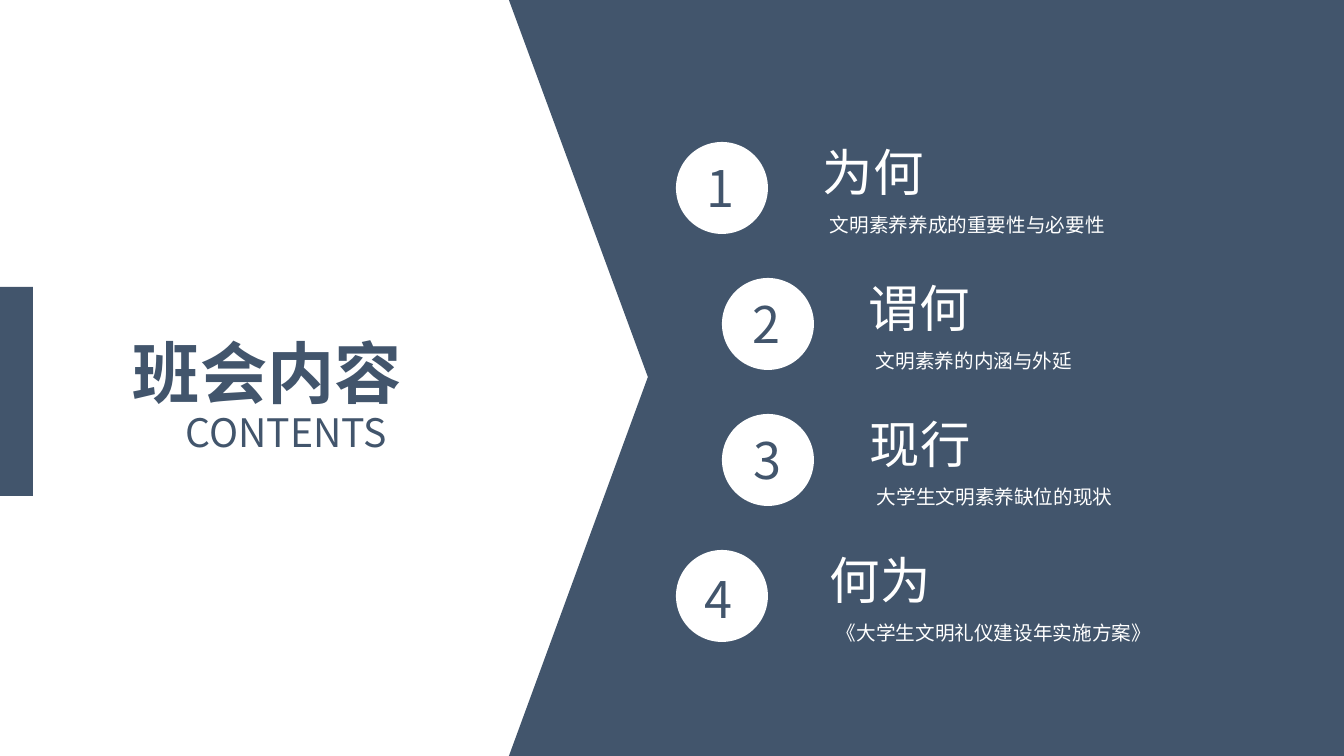
from pptx import Presentation, util as u
from pptx.dml.color import RGBColor
from pptx.enum import shapes, text
from pptx.oxml.ns import qn
from lxml import etree

NAVY, WHITE = "42556C", "FFFFFF"
WIDTH, HEIGHT = 1344, 756


def px(length):
    return u.Emu(round(length * 914400 / 100.8))


def color(value):
    return RGBColor.from_string(value)


class ContentsSlide:
    font_name = "Noto Sans CJK SC"

    def __init__(self, presentation):
        self.slide = presentation.slides.add_slide(presentation.slide_layouts[6])

    def paint(self, shape, fill):
        shape.shadow.inherit = False
        shape.fill.solid()
        shape.fill.fore_color.rgb = color(fill)
        shape.line.fill.background()

    def shape(self, kind, left, top, width, height, fill):
        shape = self.slide.shapes.add_shape(kind, px(left), px(top), px(width), px(height))
        self.paint(shape, fill)

    def outline(self, points, fill):
        builder = self.slide.shapes.build_freeform(*points[0], scale=px(1))
        builder.add_line_segments(points[1:], close=True)
        self.paint(builder.convert_to_shape(), fill)

    def text(self, words, left, top, width, height, size, fill,
             bold=False, align=text.PP_ALIGN.LEFT, spacing=None):
        box = self.slide.shapes.add_textbox(px(left), px(top), px(width), px(height))
        box.text_frame.word_wrap = True
        paragraph = box.text_frame.paragraphs[0]
        paragraph.alignment = align
        if spacing:
            paragraph.line_spacing = spacing
        run = paragraph.add_run()
        run.text = words
        run.font.size = u.Pt(size)
        run.font.bold = bold
        run.font.color.rgb = color(fill)
        run.font.name = self.font_name
        east_asian = etree.SubElement(run.font._element, qn("a:ea"))
        east_asian.set("typeface", self.font_name)

    def topic(self, number, title, subtitle, left, top, title_gap, number_shift):
        self.shape(shapes.MSO_SHAPE.OVAL, left, top, 92, 92, WHITE)
        self.text(str(number), left + 21 + number_shift[0], top + 10 + number_shift[1],
                  53, 71, 36, NAVY)
        title_left = left + title_gap
        self.text(title, title_left, top - 6, 130, 71, 36, WHITE)
        self.text(subtitle, title_left + 7, top + 63, 437, 37, 14, WHITE, spacing=1.14)


def main():
    presentation = Presentation()
    presentation.slide_width, presentation.slide_height = px(WIDTH), px(HEIGHT)
    contents = ContentsSlide(presentation)

    # Navy panel with an arrow-shaped notch, and the left tab
    contents.outline([(509, 0), (WIDTH, 0), (WIDTH, HEIGHT), (509, HEIGHT), (648, 377)], NAVY)
    contents.shape(shapes.MSO_SHAPE.RECTANGLE, 0, 287, 33, 209, NAVY)

    # Heading
    justify = text.PP_ALIGN.JUSTIFY
    contents.text("班会内容", 123, 326, 374, 92, 48, NAVY, bold=True, align=justify)
    contents.text("CONTENTS", 176, 403, 268, 57, 28, NAVY, align=justify)

    # Numbered topics, evenly spaced down the panel
    topics = [
        ("为何", "文明素养养成的重要性与必要性", 676, 137, (0, 0)),
        ("谓何", "文明素养的内涵与外延", 722, 137, (0, 0)),
        ("现行", "大学生文明素养缺位的现状", 722, 138, (1, 0)),
        ("何为", "《大学生文明礼仪建设年实施方案》", 676, 144, (-2, 3)),
    ]
    for index, (title, subtitle, left, title_gap, number_shift) in enumerate(topics):
        contents.topic(index + 1, title, subtitle, left, 142 + 136 * index,
                       title_gap, number_shift)

    presentation.save("out.pptx")


if __name__ == "__main__":
    main()
